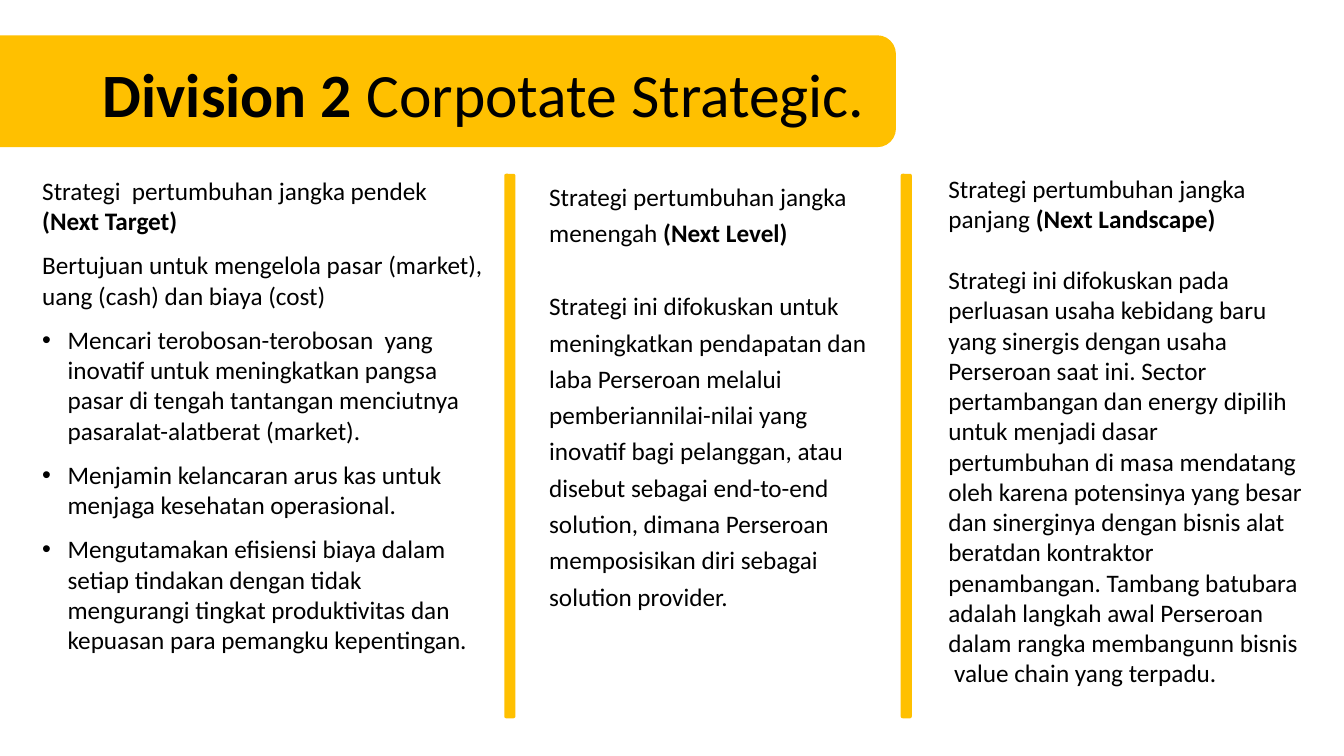
from lxml.etree import SubElement
from pptx import Presentation
from pptx.dml.color import RGBColor
from pptx.enum.shapes import MSO_SHAPE
from pptx.enum.text import MSO_ANCHOR, MSO_AUTO_SIZE, PP_ALIGN
from pptx.oxml.ns import qn
from pptx.util import Cm, Pt

YELLOW = "FFC000"
BLACK = "000000"
NBSP = chr(160)


def color(hex_string):
    return RGBColor.from_string(hex_string)


def write_paragraph(paragraph, pieces, size=18, line_spacing=1.0, space_before=0):
    """Fill a paragraph with (text, bold) pieces."""
    paragraph.alignment = PP_ALIGN.LEFT
    paragraph.line_spacing = line_spacing
    paragraph.space_before = Pt(space_before)
    for text, bold in pieces:
        run = paragraph.add_run()
        run.text = text
        run.font.name = "Calibri"
        run.font.size = Pt(size)
        run.font.bold = bold
        run.font.color.rgb = color(BLACK)


presentation = Presentation()
presentation.slide_width = Cm(33.87)
presentation.slide_height = Cm(19.05)
slide = presentation.slides.add_slide(presentation.slide_layouts[1])
title, body = slide.placeholders

# Title banner and the two column dividers
bars = [
    (-1.14, 0.89, 23.72, 2.82),
    (12.71, 4.38, 0.28, 13.72),
    (22.7, 4.38, 0.28, 13.72),
]
for left, top, width, height in bars:
    bar = slide.shapes.add_shape(
        MSO_SHAPE.ROUNDED_RECTANGLE, Cm(left), Cm(top), Cm(width), Cm(height)
    )
    bar.shadow.inherit = False
    bar.fill.solid()
    bar.fill.fore_color.rgb = color(YELLOW)
    bar.line.fill.background()
    # Keep the bars behind the title and body
    title.element.addprevious(bar.element)

# Title
title.left, title.top, title.width, title.height = Cm(2.34), Cm(0.61), Cm(29.21), Cm(3.68)
title.text_frame.auto_size = MSO_AUTO_SIZE.NONE
title.text_frame.vertical_anchor = MSO_ANCHOR.MIDDLE
write_paragraph(
    title.text_frame.paragraphs[0],
    [("Division 2 ", True), ("Corpotate Strategic.", False)],
    size=44,
    line_spacing=0.9,
)

# Short-term strategy
short_term = [
    (False, [("Strategi  pertumbuhan jangka pendek ", False), ("(Next Target)", True)]),
    (False, [("Bertujuan untuk mengelola pasar (market), uang (cash) dan biaya (cost)", False)]),
    (True, [("Mencari terobosan-terobosan  yang inovatif untuk meningkatkan pangsa pasar "
             "di tengah tantangan menciutnya pasaralat-alatberat (market).", False)]),
    (True, [("Menjamin kelancaran arus kas untuk menjaga kesehatan operasional.", False)]),
    (True, [("Mengutamakan efisiensi biaya dalam setiap tindakan dengan tidak mengurangi "
             "tingkat produktivitas dan kepuasan para pemangku kepentingan.", False)]),
]
body.left, body.top, body.width, body.height = Cm(0.81), Cm(4.29), Cm(11.73), Cm(13.82)
body.text_frame.auto_size = MSO_AUTO_SIZE.NONE
for index, (bulleted, pieces) in enumerate(short_term):
    paragraph = body.text_frame.paragraphs[0] if index == 0 else body.text_frame.add_paragraph()
    write_paragraph(paragraph, pieces, space_before=10)
    properties = paragraph._p.get_or_add_pPr()
    indent = Cm(0.64) if bulleted else 0
    properties.set("marL", str(indent))
    properties.set("indent", str(-indent))
    if bulleted:
        SubElement(properties, qn("a:buFont"), typeface="Arial")
        SubElement(properties, qn("a:buChar"), char="•")
    else:
        SubElement(properties, qn("a:buNone"))

# Medium-term and long-term strategies
columns = [
    ((13.59, 4.29, 8.99, 12.12), 1.2, 26.4,
     "Strategi pertumbuhan jangka menengah ", "(Next Level)",
     "Strategi ini difokuskan untuk meningkatkan pendapatan dan laba Perseroan melalui "
     "pemberiannilai-nilai yang inovatif bagi pelanggan, atau disebut sebagai end-to-end "
     "solution, dimana Perseroan memposisikan diri sebagai solution provider."),
    ((23.65, 4.24, 9.45, 14.1), 1.0, 22,
     "Strategi pertumbuhan jangka panjang ", "(Next Landscape)",
     "Strategi ini difokuskan pada perluasan usaha kebidang baru yang sinergis dengan usaha "
     "Perseroan saat ini. Sector pertambangan dan energy dipilih untuk menjadi dasar "
     f"pertumbuhan{NBSP}di masa mendatang oleh karena potensinya yang besar dan sinerginya "
     f"dengan bisnis alat beratdan kontraktor penambangan.{NBSP}Tambang batubara adalah "
     f"langkah awal Perseroan dalam rangka membangunn bisnis {NBSP}value chain yang terpadu."),
]
for (left, top, width, height), line_spacing, gap, heading, name, description in columns:
    text_box = slide.shapes.add_textbox(Cm(left), Cm(top), Cm(width), Cm(height))
    text_frame = text_box.text_frame
    text_frame.word_wrap = True
    text_frame.auto_size = MSO_AUTO_SIZE.SHAPE_TO_FIT_TEXT
    write_paragraph(
        text_frame.paragraphs[0], [(heading, False), (name, True)], line_spacing=line_spacing
    )
    write_paragraph(
        text_frame.add_paragraph(),
        [(description, False)],
        line_spacing=line_spacing,
        space_before=gap,
    )

presentation.save("out.pptx")
